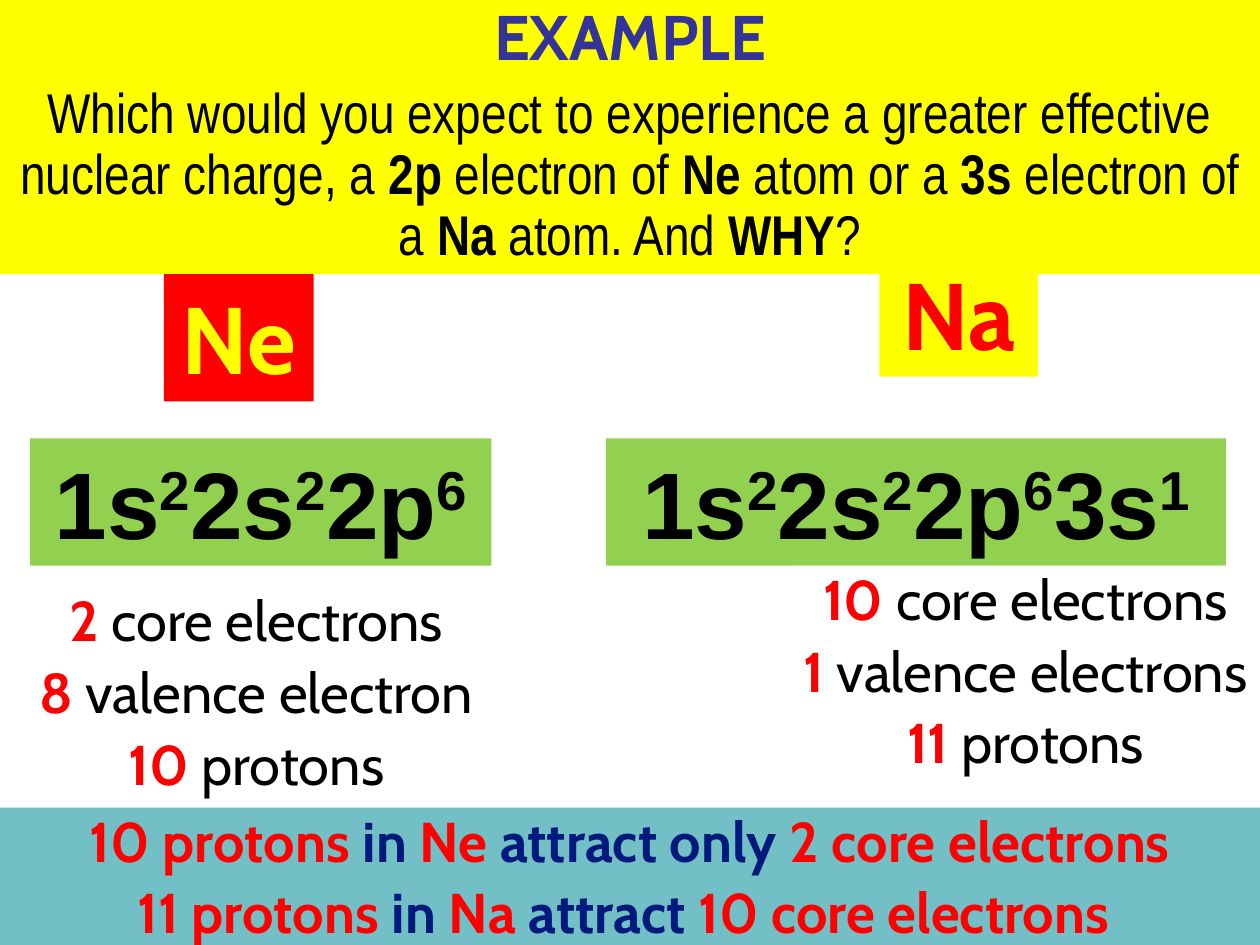
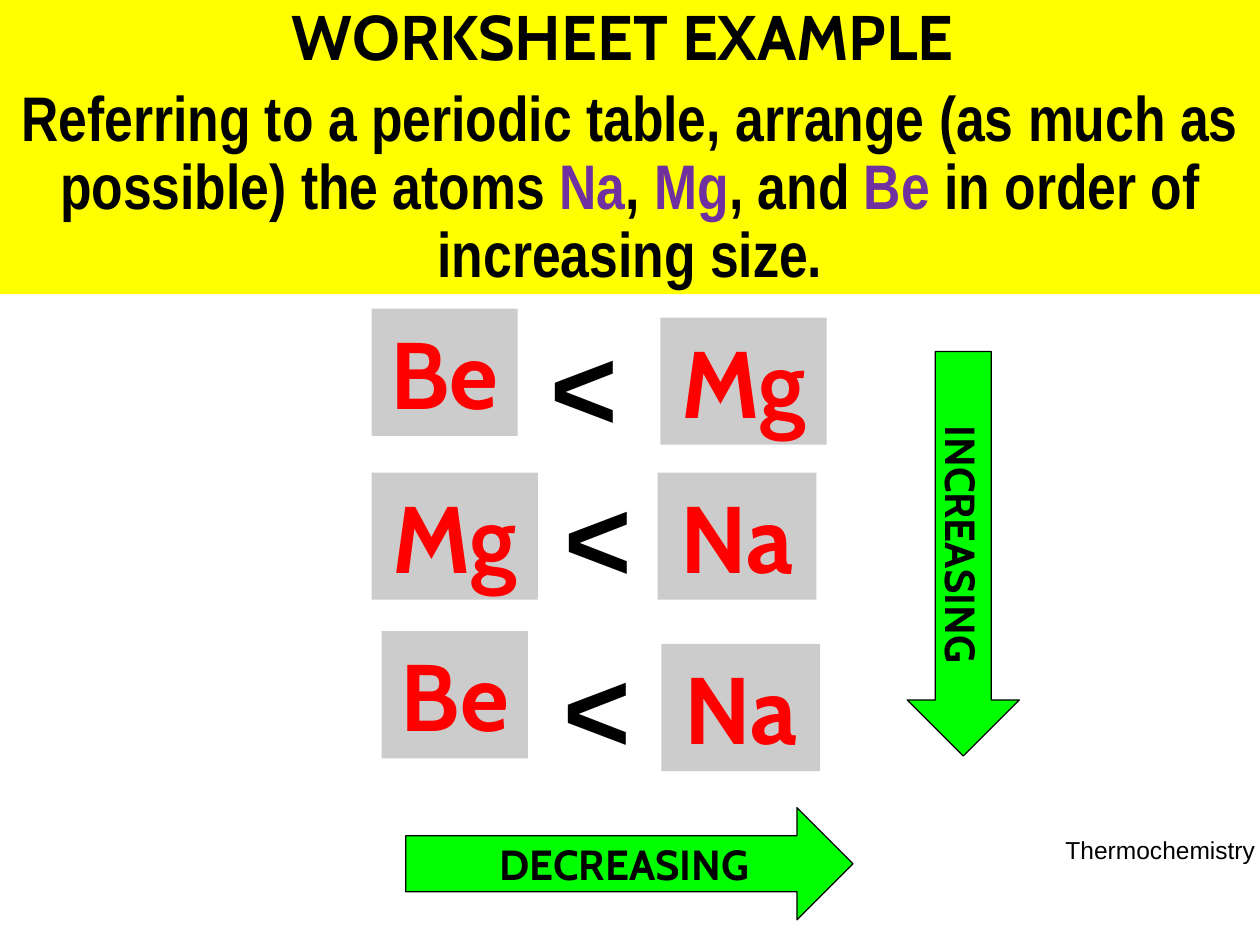
from pptx import Presentation
from pptx.dml.color import RGBColor
from pptx.enum.shapes import MSO_SHAPE
from pptx.enum.text import MSO_ANCHOR, MSO_AUTO_SIZE, PP_ALIGN
from pptx.util import Inches, Pt

RECT, ARROW = MSO_SHAPE.RECTANGLE, MSO_SHAPE.RIGHT_ARROW
TOP, CENTER, NO_FIT = MSO_ANCHOR.TOP, PP_ALIGN.CENTER, MSO_AUTO_SIZE.NONE
C = {"yellow": "FFFF00", "red": "FF0000", "green": "92D050", "teal": "72BFC5",
     "grey": "CCCCCC", "arrow": "00FF00", "black": "000000", "white": "FFFFFF",
     "indigo": "333399", "navy": "00197D", "purple": "7030A0"}
HEAD, QUESTION, SYMBOL = "Cabin", "Arial Narrow", "Arial"

prs = Presentation()
prs.slide_width, prs.slide_height = Inches(10), Inches(7.5)
COL, ROW = prs.slide_width / 100, prs.slide_height / 75
TITLE_ONLY = prs.slide_layouts[5]


def write(sp, paras, wrap=True, spacing=0.9):
    """Each paragraph is (size, font, runs); a run is (text, colour, bold, raised)."""
    tf = sp.text_frame
    tf.word_wrap, tf.auto_size, tf.vertical_anchor = wrap, NO_FIT, TOP
    for i, (size, font, runs) in enumerate(paras):
        p = tf.add_paragraph() if i else tf.paragraphs[0]
        p.alignment, p.line_spacing = CENTER, spacing
        p.space_before = Pt(0.2 * size if i else 0)
        for text, colour, bold, *raised in runs:
            r = p.add_run()
            r.text = text
            r.font.size, r.font.name, r.font.bold = Pt(size), font, bold
            r.font.color.rgb = RGBColor.from_string(C[colour])
            if any(raised):
                r.font._element.set("baseline", "30000")


def place(s, at, fill=None, kind=RECT):
    """Place a shape, a text box or (kind None) the title at grid columns and rows."""
    x, y, w, h = (round(v * unit) for v, unit in zip(at, (COL, ROW, COL, ROW)))
    if kind is None:
        sp = s.shapes.title
        sp.left, sp.top, sp.width, sp.height = x, y, w, h
    elif fill is None:
        return s.shapes.add_textbox(x, y, w, h)
    else:
        sp = s.shapes.add_shape(kind, x, y, w, h)
        sp.shadow.inherit = False
        sp.line.fill.background()
    sp.fill.solid()
    sp.fill.fore_color.rgb = RGBColor.from_string(C[fill])
    return sp


# Slide 1: effective nuclear charge of Ne and Na
s = prs.slides.add_slide(TITLE_ONLY)
question = [("Which would you expect to experience a greater effective nuclear charge, a ", False),
            ("2p", True), (" electron of ", False), ("Ne", True),
            (" atom or a ", False), ("3s", True), (" electron of a ", False),
            ("Na", True), (" atom. And ", False), ("WHY", True), ("?", False)]
write(place(s, (0, 0, 100, 21.75), "yellow", None),
      [(36, HEAD, [("EXAMPLE", "indigo", True)]),
       (32, QUESTION, [(t, "black", b) for t, b in question])])

# Element, configuration and electron counts for each atom
atoms = [
    ("Ne", "yellow", "red", (13, 21.75, 11.9, 10.1), (2.4, 34.8, 36.6, 10.1),
     ["1s", "2", "2s", "2", "2p", "6"], (1.7, 46.6, 37.3, 17.7), None,
     [("2", " core electrons"), ("8", " valence electron"), ("10", " protons")]),
    ("Na", "red", "yellow", (69.8, 19.8, 12.6, 10.1), (48.1, 34.8, 49.2, 10.1),
     ["1s", "2", "2s", "2", "2p", "6", "3s", "1"], (62.8, 44.9, 37.2, 19.2), "white",
     [("10", " core electrons"), ("1", " valence electrons"), ("11", " protons")]),
]
for name, ink, fill, name_at, config_at, config, counts_at, counts_fill, counts in atoms:
    write(place(s, name_at, fill), [(54, HEAD, [(name, ink, True)])], False, 1)
    write(place(s, config_at, "green"),
          [(54, SYMBOL, [(t, "black", True, i % 2) for i, t in enumerate(config)])], True, 1)
    # Each count stays on one line
    write(place(s, counts_at, counts_fill),
          [(32, HEAD, [(n, "red", True), (t, "black", False)]) for n, t in counts], False)

# Conclusion band, red and navy in turn
conclusions = [["10 protons", " in ", "Ne", " attract only ", "2 core electrons"],
               ["11 protons", " in ", "Na ", "attract ", "10 core electrons "]]
write(place(s, (0, 64.1, 100, 10.9), "teal"),
      [(32, HEAD, [(t, ("red", "navy")[i % 2], True) for i, t in enumerate(line)])
       for line in conclusions])

# Slide 2: ordering atoms by size
s = prs.slides.add_slide(TITLE_ONLY)
task = ["Referring to a periodic table, arrange (as much as possible) the atoms ",
        "Na", ", ", "Mg", ", and ", "Be", " in order of increasing size."]
write(place(s, (0, 0, 100, 23.35), "yellow", None),
      [(36, HEAD, [("WORKSHEET EXAMPLE ", "black", True)]),
       (36, QUESTION, [(t, ("black", "purple")[i % 2], True) for i, t in enumerate(task)])])

# Comparisons: smaller atom < larger atom
WIDTHS = {"Be": 11.6, "Mg": 13.2, "Na": 12.6}
comparisons = [(("Be", 29.5, 24.5), (42.7, 24.5), ("Mg", 52.4, 25.2)),
               (("Mg", 29.5, 37.5), (43.8, 36.5), ("Na", 52.2, 37.5)),
               (("Be", 30.3, 50.1), (43.7, 50.1), ("Na", 52.5, 51.1))]
for smaller, sign_at, larger in comparisons:
    for name, x, y in (smaller, larger):
        write(place(s, (x, y, WIDTHS[name], 10.1), "grey"),
              [(54, HEAD, [(name, "red", True)])], False, 1)
    write(place(s, (*sign_at, 7.4, 12.1)), [(66, SYMBOL, [("<", "black", True)])], False, 1)

# Trend arrows with their labels
trends = [("DECREASING", (32.2, 64.1, 35.5, 8.9), (36, 66.5, 27.1, 4), 0),
          ("INCREASING", (60.4, 39.5, 32.1, 8.9), (64.2, 41.2, 24.5, 4), 90)]
for label, arrow_at, label_at, turn in trends:
    arrow = place(s, arrow_at, "arrow", ARROW)
    arrow.line.color.rgb = RGBColor.from_string(C["black"])
    arrow.line.width = Pt(0.75)
    caption = place(s, label_at)
    write(caption, [(24, HEAD, [(label, "black", True)])])
    arrow.rotation = caption.rotation = turn

# Footer
write(place(s, (83.6, 65.8, 17, 3.3)),
      [(14, SYMBOL, [("Thermochemistry", "black", False)])], False, 1)

prs.save("out.pptx")
